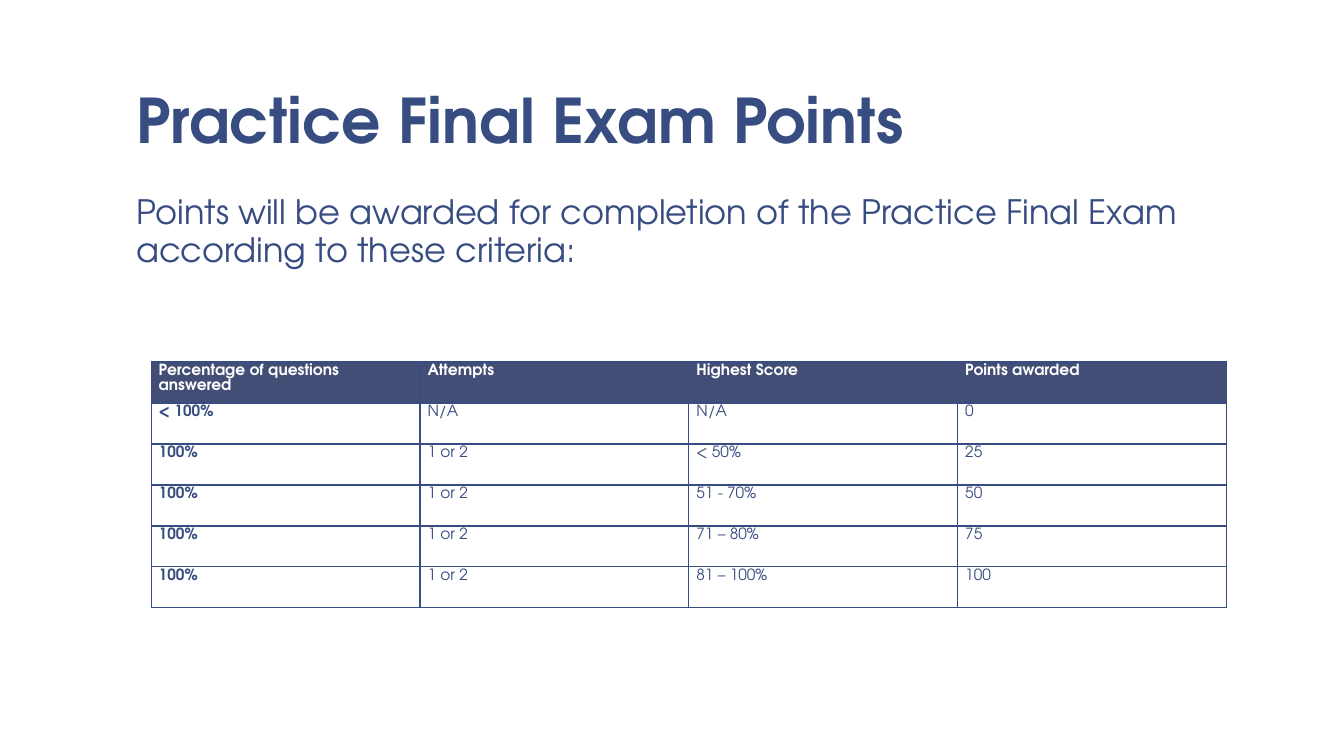
from dataclasses import dataclass

from lxml import etree
from pptx import Presentation
from pptx.dml.color import RGBColor
from pptx.enum import text
from pptx.oxml import ns
from pptx.util import Cm, Pt

FONT = "TeX Gyre Adventor"
NAVY = "374C81"
HEADER_FILL = "434E76"
WHITE = "FFFFFF"


@dataclass
class TextBlock:
    wording: str
    top: float
    height: float
    size: float
    spacing: float
    bold: bool
    anchor: text.MSO_ANCHOR


BLOCKS = [
    TextBlock("Practice Final Exam Points", 0.22, 3.89, 44, 0.85, True,
              text.MSO_ANCHOR.BOTTOM),
    TextBlock("Points will be awarded for completion of the Practice Final Exam "
              "according to these criteria:", 4.71, 12.42, 24, 0.95, False,
              text.MSO_ANCHOR.TOP),
]

CRITERIA = [
    ("Percentage of questions answered", "Attempts", "Highest Score", "Points awarded"),
    ("< 100%", "N/A", "N/A", "0"),
    ("100%", "1 or 2", "< 50%", "25"),
    ("100%", "1 or 2", "51 - 70%", "50"),
    ("100%", "1 or 2", "71 – 80%", "75"),
    ("100%", "1 or 2", "81 – 100%", "100"),
]


def rgb(value: str) -> RGBColor:
    return RGBColor.from_string(value)


def format_text(tf, size: float, color: str, bold: bool, spacing: float,
                after: float = 0) -> None:
    for p in tf.paragraphs:
        p.line_spacing = spacing
        p.space_after = Pt(after)
        for r in p.runs:
            r.font.name = FONT
            r.font.size = Pt(size)
            r.font.bold = bold
            r.font.color.rgb = rgb(color)


def add_block(s, block: TextBlock) -> None:
    sp = s.shapes.add_textbox(Cm(3.1), Cm(block.top), Cm(28.22), Cm(block.height))
    tf = sp.text_frame
    tf.word_wrap = True
    tf.vertical_anchor = block.anchor
    tf.margin_left = tf.margin_right = Cm(0.33)
    tf.margin_top = tf.margin_bottom = Cm(0.18)
    tf.text = block.wording
    format_text(tf, block.size, NAVY, block.bold, block.spacing)


def add_borders(cell) -> None:
    props = cell._tc.get_or_add_tcPr()
    for side in ("lnL", "lnR", "lnT", "lnB"):
        line = etree.SubElement(props, ns.qn(f"a:{side}"), w=str(Pt(1)))
        fill = etree.SubElement(line, ns.qn("a:solidFill"))
        etree.SubElement(fill, ns.qn("a:srgbClr"), val=NAVY)


def fill_cell(cell, wording: str, header: bool, bold: bool) -> None:
    cell.margin_left = cell.margin_right = Cm(0.19)
    cell.margin_top = Cm(0.03)
    cell.margin_bottom = 0
    cell.text_frame.text = wording
    format_text(cell.text_frame, 11, WHITE if header else NAVY, bold, 1.07, 8)
    add_borders(cell)
    if header:
        cell.fill.solid()
        cell.fill.fore_color.rgb = rgb(HEADER_FILL)
    else:
        cell.fill.background()


def add_criteria(s) -> None:
    table = s.shapes.add_table(len(CRITERIA), len(CRITERIA[0]), Cm(3.81), Cm(9.12),
                               Cm(27.1), Cm(6.2)).table
    table.horz_banding = False
    for i, row in enumerate(CRITERIA):
        for j, wording in enumerate(row):
            fill_cell(table.cell(i, j), wording, i == 0, i == 0 or j == 0)


def main() -> None:
    prs = Presentation()
    prs.slide_width, prs.slide_height = Cm(33.87), Cm(19.05)
    s = prs.slides.add_slide(prs.slide_layouts[6])
    for block in BLOCKS:
        add_block(s, block)
    add_criteria(s)
    prs.save("out.pptx")


if __name__ == "__main__":
    main()
